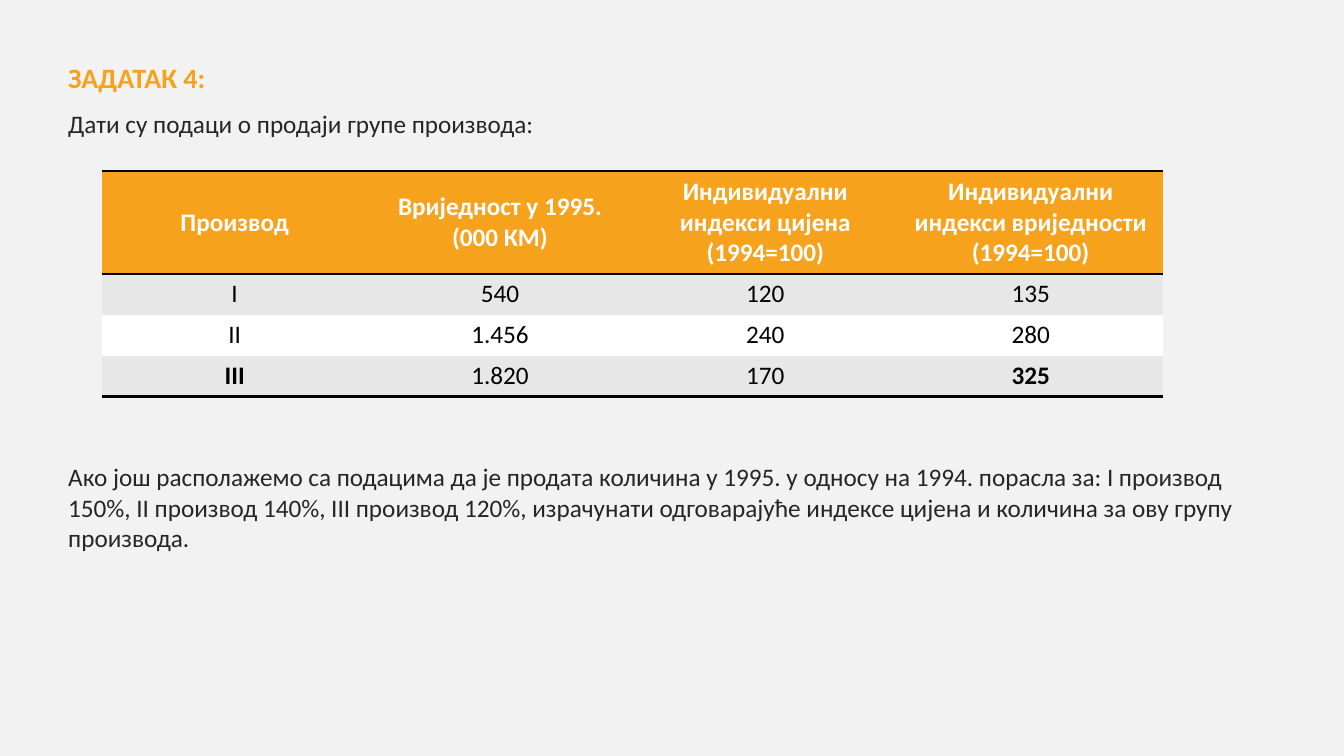
from lxml.etree import SubElement
from pptx import Presentation
from pptx.dml.color import RGBColor
from pptx.enum.text import MSO_ANCHOR, PP_ALIGN
from pptx.oxml.ns import qn
from pptx.util import Cm, Pt

ORANGE, DARK, BLACK, WHITE = "F6A21D", "262626", "000000", "FFFFFF"
GREY, BACKGROUND = "E7E7E7", "F2F2F2"


def color(value):
    return RGBColor.from_string(value)


class TaskSlide:
    font = "Calibri"

    def __init__(self, presentation):
        self.slide = presentation.slides.add_slide(presentation.slide_layouts[6])
        fill = self.slide.background.fill
        fill.solid()
        fill.fore_color.rgb = color(BACKGROUND)

    def fill_paragraph(self, paragraph, text, size, ink, bold=False):
        paragraph.text = text
        for run in paragraph.runs:
            run.font.name = self.font
            run.font.size = Pt(size)
            run.font.bold = bold
            run.font.color.rgb = color(ink)

    def text(self, left, top, width, height, paragraphs):
        frame = self.slide.shapes.add_textbox(
            Cm(left), Cm(top), Cm(width), Cm(height)).text_frame
        frame.word_wrap = True
        for index, (words, size, ink, bold, space) in enumerate(paragraphs):
            paragraph = frame.add_paragraph() if index else frame.paragraphs[0]
            paragraph.space_before = Pt(space)
            self.fill_paragraph(paragraph, words, size, ink, bold)

    def borders(self, cell, ruled_sides):
        properties = cell._tc.get_or_add_tcPr()
        for position, side in enumerate("LRTB"):
            line = SubElement(properties, qn(f"a:ln{side}"))
            if side in ruled_sides:
                line.set("w", str(Pt(2)))
                fill = SubElement(line, qn("a:solidFill"))
                SubElement(fill, qn("a:srgbClr")).set("val", BLACK)
            else:
                SubElement(line, qn("a:noFill"))
            properties.insert(position, line)

    def table(self, left, top, width, row_heights, rows, bold_cells):
        columns = len(rows[0])
        table = self.slide.shapes.add_table(
            len(rows), columns, Cm(left), Cm(top), Cm(width),
            Cm(sum(row_heights))).table
        for column in table.columns:
            column.width = Cm(width / columns)
        for r, (height, values) in enumerate(zip(row_heights, rows)):
            table.rows[r].height = Cm(height)
            header = r == 0
            ruled_sides = {0: "TB", 1: "T", len(rows) - 1: "B"}.get(r, "")
            for c, value in enumerate(values):
                cell = table.cell(r, c)
                cell.vertical_anchor = MSO_ANCHOR.MIDDLE
                cell.fill.solid()
                cell.fill.fore_color.rgb = color(
                    ORANGE if header else GREY if r % 2 else WHITE)
                paragraph = cell.text_frame.paragraphs[0]
                paragraph.alignment = PP_ALIGN.CENTER
                self.fill_paragraph(paragraph, value, 18,
                                    WHITE if header else BLACK,
                                    header or (r, c) in bold_cells)
                self.borders(cell, ruled_sides)


def main():
    presentation = Presentation()
    presentation.slide_width = Cm(33.87)
    presentation.slide_height = Cm(19.05)
    task = TaskSlide(presentation)

    # Task wording, with room for the table before the question
    task.text(1.47, 1.4, 30.99, 17.02, [
        ("ЗАДАТАК 4:", 20, ORANGE, True, 10),
        ("Дати су подаци о продаји групе производа:", 18, DARK, False, 10),
        ("Ако још располажемо са подацима да је продата количина у 1995. "
         "у односу на 1994. порасла за: I производ 150%, II производ 140%, "
         "III производ 120%, израчунати одговарајуће индексе цијена и "
         "количина за ову групу производа.", 18, DARK, False, 231),
    ])

    # Sales data by product
    task.table(2.57, 4.31, 26.75, [2.59, 1.03, 1.03, 1.03], [
        ["Производ", "Вриједност у 1995. (000 КМ)",
         "Индивидуални индекси цијена (1994=100)",
         "Индивидуални индекси вриједности (1994=100)"],
        ["I", "540", "120", "135"],
        ["II", "1.456", "240", "280"],
        ["III", "1.820", "170", "325"],
    ], bold_cells={(3, 0), (3, 3)})

    presentation.save("out.pptx")


if __name__ == "__main__":
    main()
